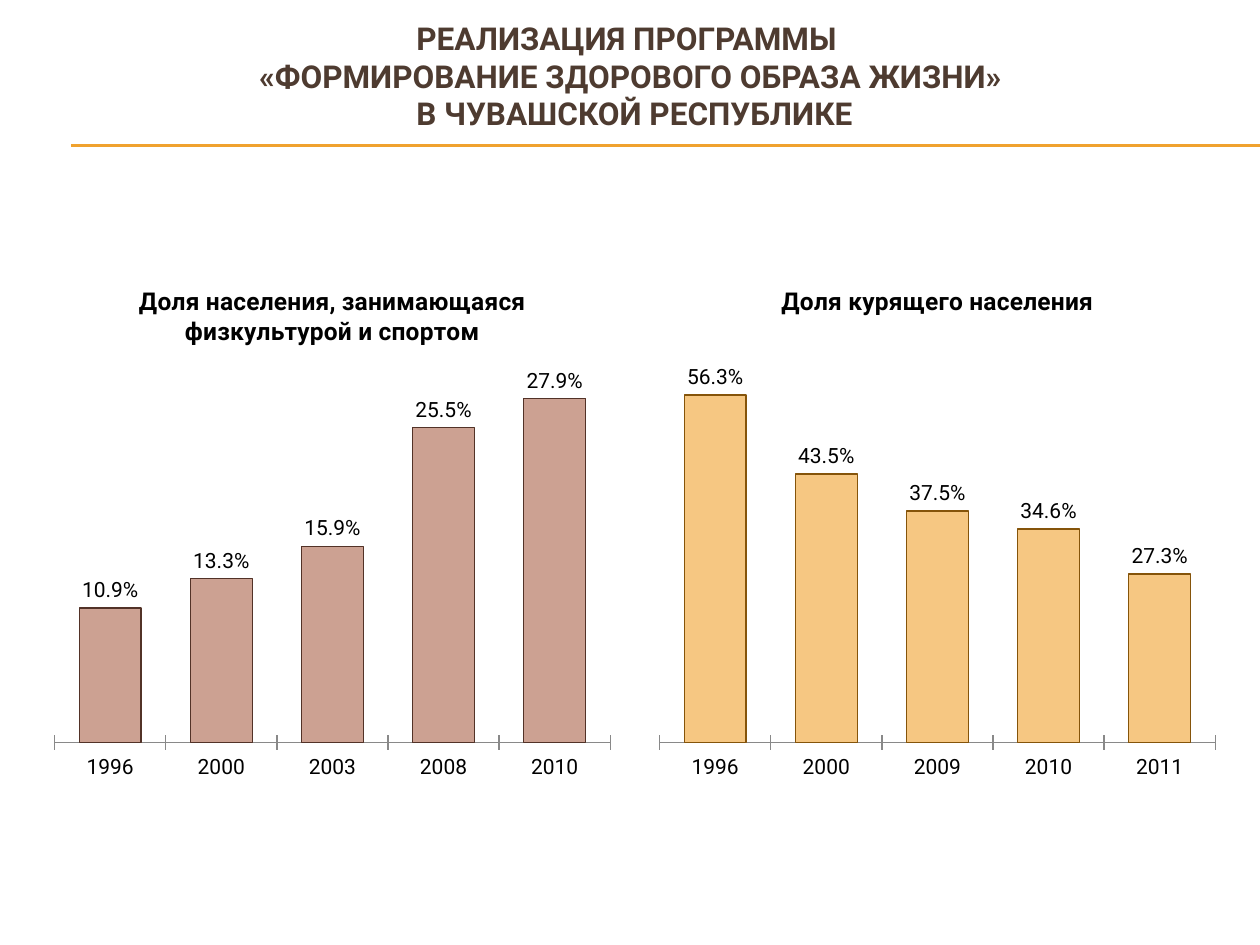
from lxml import etree
from pptx import Presentation, util as u
from pptx.chart.data import CategoryChartData
from pptx.dml.color import RGBColor
from pptx.enum import chart as ch, shapes, text
from pptx.oxml.ns import qn

FONT = "Roboto"
HEAD = ("РЕАЛИЗАЦИЯ ПРОГРАММЫ \v«ФОРМИРОВАНИЕ ЗДОРОВОГО ОБРАЗА ЖИЗНИ»"
        "\v В ЧУВАШСКОЙ РЕСПУБЛИКЕ")
# title, left, axis maximum, fill, outline, shares by year
CHARTS = [
    ("Доля населения, занимающаяся физкультурой и спортом", 35, 0.3,
     "CCA192", "523227",
     {"1996": 0.109, "2000": 0.133, "2003": 0.159, "2008": 0.255, "2010": 0.279}),
    ("Доля курящего населения", 640, 0.6,
     "F6C782", "85540A",
     {"1996": 0.563, "2000": 0.435, "2009": 0.375, "2010": 0.346, "2011": 0.273}),
]
RULES = [145, 146]
PLOT = {"x": 0.033, "y": 0.209, "w": 0.934, "h": 0.701}


def px(n):
    return u.Emu(round(n * 914400 / 126))


def rgb(code):
    return RGBColor.from_string(code)


def style(font, size, color="000000", bold=False):
    font.name, font.size, font.bold = FONT, u.Pt(size), bold
    font.color.rgb = rgb(color)


def add_rule(slide, y):
    rule = slide.shapes.add_connector(
        shapes.MSO_CONNECTOR.STRAIGHT, px(71), px(y), px(1260), px(y))
    rule.line.color.rgb = rgb("F0A22E")
    rule.line.width = u.Pt(0.75)
    etree.SubElement(rule._element.spPr, qn("a:effectLst"))


def add_head(slide):
    box = slide.shapes.add_textbox(px(35), px(37), px(1191), px(77))
    frame = box.text_frame
    frame.word_wrap = True
    frame.vertical_anchor = text.MSO_ANCHOR.MIDDLE
    frame.text = HEAD
    para = frame.paragraphs[0]
    para.alignment = text.PP_ALIGN.CENTER
    style(para.font, 18, "4E3B30", True)


def fix_plot(chart):
    area = chart._chartSpace.chart.plotArea
    for old in area.findall(qn("c:layout")):
        area.remove(old)
    layout = etree.Element(qn("c:layout"))
    manual = etree.SubElement(layout, qn("c:manualLayout"))
    parts = {"layoutTarget": "inner", "xMode": "edge", "yMode": "edge", **PLOT}
    for tag, val in parts.items():
        etree.SubElement(manual, qn("c:" + tag)).set("val", str(val))
    area.insert(0, layout)


def add_chart(slide, title, left, top, fill, edge, shares):
    data = CategoryChartData(number_format="0.0%")
    data.categories = list(shares)
    data.add_series("Series 1", list(shares.values()))
    chart = slide.shapes.add_chart(
        ch.XL_CHART_TYPE.COLUMN_CLUSTERED,
        px(left), px(262), px(595), px(528), data).chart
    style(chart.font, 18)
    chart.has_legend = False
    chart.has_title = True
    chart.chart_title.include_in_layout = False
    frame = chart.chart_title.text_frame
    frame.text = title
    style(frame.paragraphs[0].font, 14, bold=True)
    fix_plot(chart)

    # Axes
    cat, val = chart.category_axis, chart.value_axis
    cat.major_tick_mark = ch.XL_TICK_MARK.CROSS
    cat.format.line.color.rgb = rgb("898989")
    style(cat.tick_labels.font, 12)
    val.has_major_gridlines = False
    val.minimum_scale, val.maximum_scale = 0, top
    val.tick_labels.number_format = "0.0%"
    val.tick_labels.number_format_is_linked = False
    val.visible = False

    # Bars and labels
    plot = chart.plots[0]
    plot.gap_width = 80
    plot.vary_by_categories = False
    bars = plot.series[0]
    bars.format.fill.solid()
    bars.format.fill.fore_color.rgb = rgb(fill)
    bars.format.line.color.rgb = rgb(edge)
    bars.format.line.width = u.Pt(0.75)
    labels = bars.data_labels
    labels.show_value = True
    labels.number_format = "0.0%"
    labels.number_format_is_linked = False
    labels.position = ch.XL_LABEL_POSITION.OUTSIDE_END
    style(labels.font, 12)


def main():
    prs = Presentation()
    prs.slide_width, prs.slide_height = px(1260), px(945)
    slide = prs.slides.add_slide(prs.slide_layouts[6])
    for y in RULES:
        add_rule(slide, y)
    add_head(slide)
    for item in CHARTS:
        add_chart(slide, *item)
    prs.save("out.pptx")


if __name__ == "__main__":
    main()
